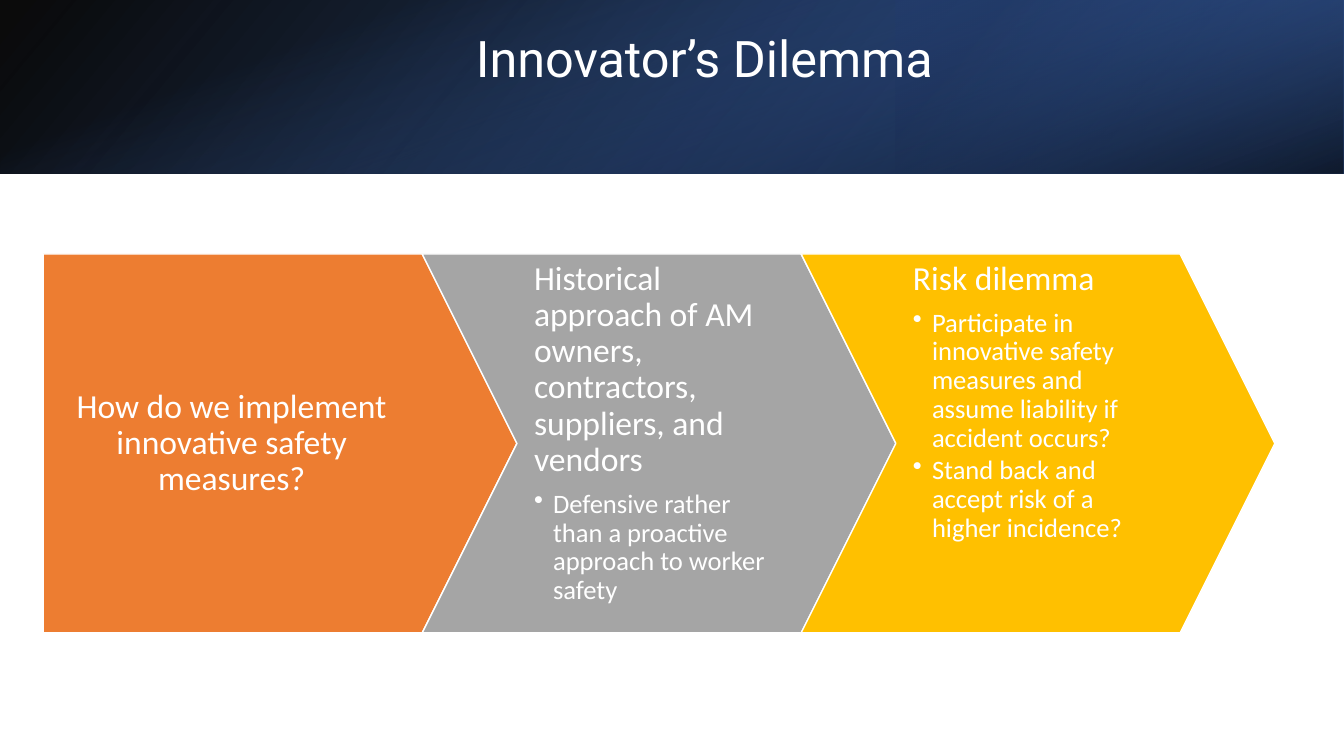
"""Build the Innovator's Dilemma slide: a gradient banner above three linked arrows."""
from dataclasses import dataclass
from typing import Any

from lxml.etree import SubElement
from pptx import Presentation
from pptx.dml.color import RGBColor
from pptx.enum.shapes import MSO_SHAPE
from pptx.enum.text import MSO_ANCHOR, MSO_AUTO_SIZE, PP_ALIGN
from pptx.oxml.ns import qn
from pptx.util import Cm, Pt


@dataclass(frozen=True)
class Theme:
    white: str = "FFFFFF"
    orange: str = "ED7D31"
    grey: str = "A5A5A5"
    gold: str = "FFC000"
    black: str = "000000"
    blue: str = "4472C4"
    deep_blue: str = "2F5597"
    navy: str = "203864"
    title_font: str = "Roboto"
    body_font: str = "Calibri"
    title_size: float = 36
    heading_size: float = 24
    bullet_size: float = 19


@dataclass(frozen=True)
class Stop:
    position: int
    color: str
    opacity: int = 100


@dataclass(frozen=True)
class Band:
    left: float
    top: float
    width: float
    height: float
    angle: int
    stops: tuple[Stop, ...]
    rotation: int = 0
    flipped: bool = False


@dataclass(frozen=True)
class Arrow:
    preset: MSO_SHAPE
    color: str
    heading: str
    bullets: tuple[str, ...] = ()


THEME = Theme()
PAGE_WIDTH, PAGE_HEIGHT, BANNER_HEIGHT = 33.87, 19.05, 4.37
ARROW_LEFT, ARROW_TOP, ARROW_HEIGHT = 1.09, 6.4, 9.55
POINT_RATIO = 0.25
POINT_DEPTH = ARROW_HEIGHT * POINT_RATIO
ARROW_WIDTH = ARROW_HEIGHT + POINT_DEPTH
BULLET_INDENT = 0.48

BANDS = (
    Band(0, 0, PAGE_WIDTH, BANNER_HEIGHT, 140,
         (Stop(0, THEME.black, 96), Stop(100, THEME.deep_blue)), flipped=True),
    Band(PAGE_WIDTH * 2 / 3, 0, PAGE_WIDTH / 3, BANNER_HEIGHT, 320,
         (Stop(19, THEME.navy, 68), Stop(100, THEME.blue, 79)), rotation=180, flipped=True),
    Band((PAGE_WIDTH - BANNER_HEIGHT) / 2, (BANNER_HEIGHT - PAGE_WIDTH) / 2,
         BANNER_HEIGHT, PAGE_WIDTH, 340,
         (Stop(23, THEME.blue, 0), Stop(99, THEME.black, 74)), rotation=90),
)

ARROWS = (
    Arrow(MSO_SHAPE.PENTAGON, THEME.orange, "How do we implement innovative safety measures?"),
    Arrow(MSO_SHAPE.CHEVRON, THEME.grey,
          "Historical approach of AM owners, contractors, suppliers, and vendors",
          ("Defensive rather than a proactive approach to worker safety",)),
    Arrow(MSO_SHAPE.CHEVRON, THEME.gold, "Risk dilemma",
          ("Participate in innovative safety measures and assume liability if accident occurs?",
           "Stand back and accept risk of a higher incidence?")),
)


def apply(target: Any, values: dict[str, Any]) -> None:
    for name, value in values.items():
        setattr(target, name, value)


def write(para: Any, text: str, size: float, font: str, **layout: Any) -> None:
    apply(para, {"line_spacing": 0.9, "space_before": Pt(0), **layout})
    span = para.add_run()
    span.text = text
    apply(span.font, {"name": font, "size": Pt(size)})
    span.font.color.rgb = RGBColor.from_string(THEME.white)


def add_bullet(para: Any) -> None:
    properties = para._p.get_or_add_pPr()
    properties.set("marL", str(Cm(BULLET_INDENT)))
    properties.set("indent", str(-Cm(BULLET_INDENT)))
    SubElement(properties, qn("a:buChar"), char="•")


def draw_band(page: Any, band: Band) -> None:
    shape = page.shapes.add_shape(MSO_SHAPE.RECTANGLE, Cm(band.left), Cm(band.top),
                                  Cm(band.width), Cm(band.height))
    shape.rotation = band.rotation
    shape.shadow.inherit = False
    shape.line.fill.background()
    shape.fill.gradient()
    properties = shape.element.spPr
    if band.flipped:
        properties.find(qn("a:xfrm")).set("flipH", "1")
    gradient = properties.find(qn("a:gradFill"))
    for child in list(gradient):
        gradient.remove(child)
    gradient.set("rotWithShape", "1")
    stops = SubElement(gradient, qn("a:gsLst"))
    for stop in band.stops:
        entry = SubElement(stops, qn("a:gs"), pos=str(stop.position * 1000))
        color = SubElement(entry, qn("a:srgbClr"), val=stop.color)
        SubElement(color, qn("a:alpha"), val=str(stop.opacity * 1000))
    SubElement(gradient, qn("a:lin"), ang=str(band.angle * 60000), scaled="0")


def draw_title(page: Any) -> None:
    title = page.shapes.title
    apply(title, {"left": Cm(3.81), "top": Cm(0.86), "width": Cm(27.89), "height": Cm(2.44)})
    apply(title.text_frame, {"vertical_anchor": MSO_ANCHOR.TOP, "margin_top": 0,
                             "auto_size": MSO_AUTO_SIZE.NONE, "word_wrap": True})
    write(title.text_frame.paragraphs[0], "Innovator’s Dilemma", THEME.title_size,
          THEME.title_font, alignment=PP_ALIGN.CENTER)
    title.element.getparent().append(title.element)


def draw_arrow(group: Any, arrow: Arrow, left: float) -> None:
    shape = group.shapes.add_shape(arrow.preset, Cm(left), Cm(ARROW_TOP),
                                   Cm(ARROW_WIDTH), Cm(ARROW_HEIGHT))
    shape.adjustments[0] = POINT_RATIO
    shape.shadow.inherit = False
    shape.fill.solid()
    shape.fill.fore_color.rgb = RGBColor.from_string(arrow.color)
    shape.line.color.rgb = RGBColor.from_string(THEME.white)
    shape.line.width = Pt(1)

    opening = arrow.preset == MSO_SHAPE.PENTAGON
    text_left = left if opening else left + POINT_DEPTH
    text_width = ARROW_WIDTH - POINT_DEPTH * (0.5 if opening else 2)
    box = group.shapes.add_textbox(Cm(text_left), Cm(ARROW_TOP), Cm(text_width), Cm(ARROW_HEIGHT))
    frame = box.text_frame
    apply(frame, {
        "word_wrap": True,
        "vertical_anchor": MSO_ANCHOR.MIDDLE if opening else MSO_ANCHOR.TOP,
        "margin_left": Cm(0.43), "margin_right": Cm(1.68 if opening else 0.43),
        "margin_top": Cm(0.18), "margin_bottom": Cm(0.18),
    })
    write(frame.paragraphs[0], arrow.heading, THEME.heading_size, THEME.body_font,
          alignment=PP_ALIGN.CENTER if opening else PP_ALIGN.LEFT,
          space_after=Pt(THEME.heading_size * 0.35))
    for bullet in arrow.bullets:
        para = frame.add_paragraph()
        write(para, bullet, THEME.bullet_size, THEME.body_font, level=1,
              alignment=PP_ALIGN.LEFT, space_after=Pt(THEME.bullet_size * 0.15))
        add_bullet(para)


def main() -> None:
    deck = Presentation()
    apply(deck, {"slide_width": Cm(PAGE_WIDTH), "slide_height": Cm(PAGE_HEIGHT)})
    page = deck.slides.add_slide(deck.slide_layouts.get_by_name("Title Only"))
    for band in BANDS:
        draw_band(page, band)
    draw_title(page)
    group = page.shapes.add_group_shape()
    for index, arrow in enumerate(ARROWS):
        draw_arrow(group, arrow, ARROW_LEFT + index * ARROW_HEIGHT)
    deck.save("out.pptx")


if __name__ == "__main__":
    main()
